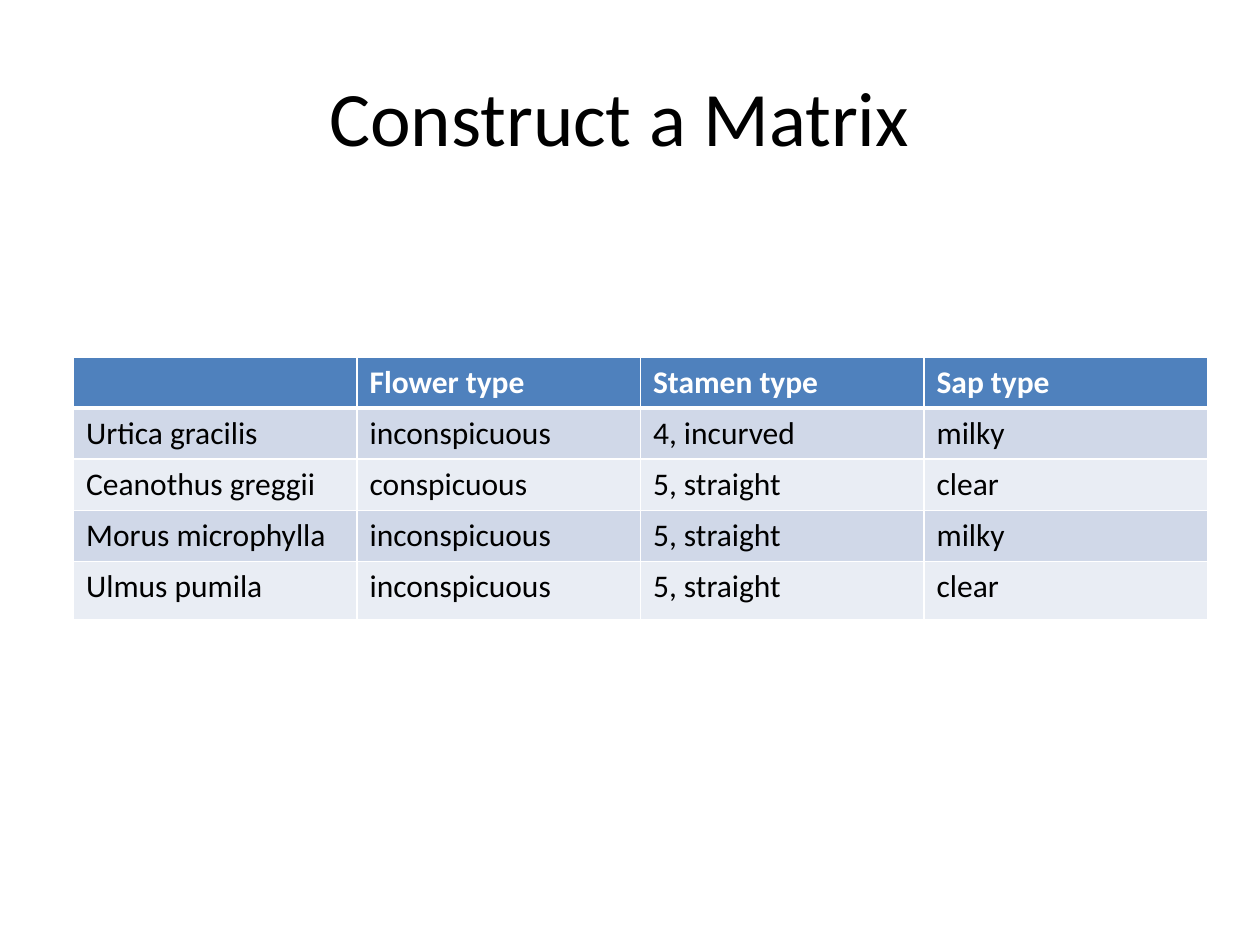
from dataclasses import dataclass

from pptx import Presentation as Deck
from pptx.dml.color import RGBColor as RGB
from pptx.enum.text import MSO_ANCHOR as Anchor, PP_ALIGN as Align
from pptx.oxml.ns import qn
from pptx.util import Pt
from lxml.etree import SubElement as Sub


@dataclass(frozen=True)
class Theme:
    """Colours, font and type sizes of the slide."""
    font: str = "Calibri"
    head: str = "4F81BD"
    bands: tuple = ("D0D8E8", "E9EDF4")
    dark: str = "000000"
    light: str = "FFFFFF"
    title: int = 44
    body: int = 18
    thin: int = 1
    thick: int = 3


class Page:
    """Holds the theme and the current slide."""

    def __init__(self, deck, theme):
        """Add a slide with a title placeholder."""
        self.theme = theme
        self.slide = deck.slides.add_slide(deck.slide_layouts[5])

    def run(self, para, text, size, color, bold=False):
        """Add one styled run to a paragraph."""
        run = para.add_run()
        run.text = text
        font = run.font
        font.name, font.size, font.bold = self.theme.font, Pt(size), bold
        font.color.rgb = RGB.from_string(color)

    def title(self, text, box):
        """Place and fill the title placeholder."""
        shape = self.slide.shapes.title
        shape.left, shape.top, shape.width, shape.height = map(Pt, box)
        frame = shape.text_frame
        frame.word_wrap = True
        frame.vertical_anchor = Anchor.MIDDLE
        para = frame.paragraphs[0]
        para.alignment = Align.CENTER
        self.run(para, text, self.theme.title, self.theme.dark)

    def edge(self, cell, side, width):
        """Draw one border of a cell."""
        line = Sub(cell._tc.get_or_add_tcPr(), qn(f"a:ln{side}"), w=str(Pt(width)))
        Sub(Sub(line, qn("a:solidFill")), qn("a:srgbClr"), val=self.theme.light)

    def cell(self, cell, text, row):
        """Style and fill one table cell."""
        look = self.theme
        rules = {"L": look.thin, "R": look.thin,
                 "T": look.thick if row == 1 else look.thin,
                 "B": look.thick if row == 0 else look.thin}
        for side, width in rules.items():
            self.edge(cell, side, width)
        fill = look.bands[(row - 1) % 2] if row else look.head
        cell.fill.solid()
        cell.fill.fore_color.rgb = RGB.from_string(fill)
        if text:
            color = look.dark if row else look.light
            self.run(cell.text_frame.paragraphs[0], text, look.body, color, row == 0)

    def table(self, data, box, high):
        """Add a banded table with equal columns and the given row heights."""
        frame = self.slide.shapes.add_table(len(data), len(data[0]), *map(Pt, box))
        grid = frame.table
        for row, size in zip(grid.rows, high):
            row.height = Pt(size)
        for r, texts in enumerate(data):
            for c, text in enumerate(texts):
                self.cell(grid.cell(r, c), text, r)


TRAITS = [
    ("", "Flower type", "Stamen type", "Sap type"),
    ("Urtica gracilis", "inconspicuous", "4, incurved", "milky"),
    ("Ceanothus greggii", "conspicuous", "5, straight", "clear"),
    ("Morus microphylla", "inconspicuous", "5, straight", "milky"),
    ("Ulmus pumila", "inconspicuous", "5, straight", "clear"),
]


def main():
    """Build the slide and save it."""
    deck = Deck()
    deck.slide_width, deck.slide_height = Pt(720), Pt(540)
    page = Page(deck, Theme())
    page.title("Construct a Matrix", (30, 24, 648, 84))
    high = [29.2] * 4 + [33.1]
    page.table(TRAITS, (42, 204, 648, sum(high)), high)
    deck.save("out.pptx")


if __name__ == "__main__":
    main()
